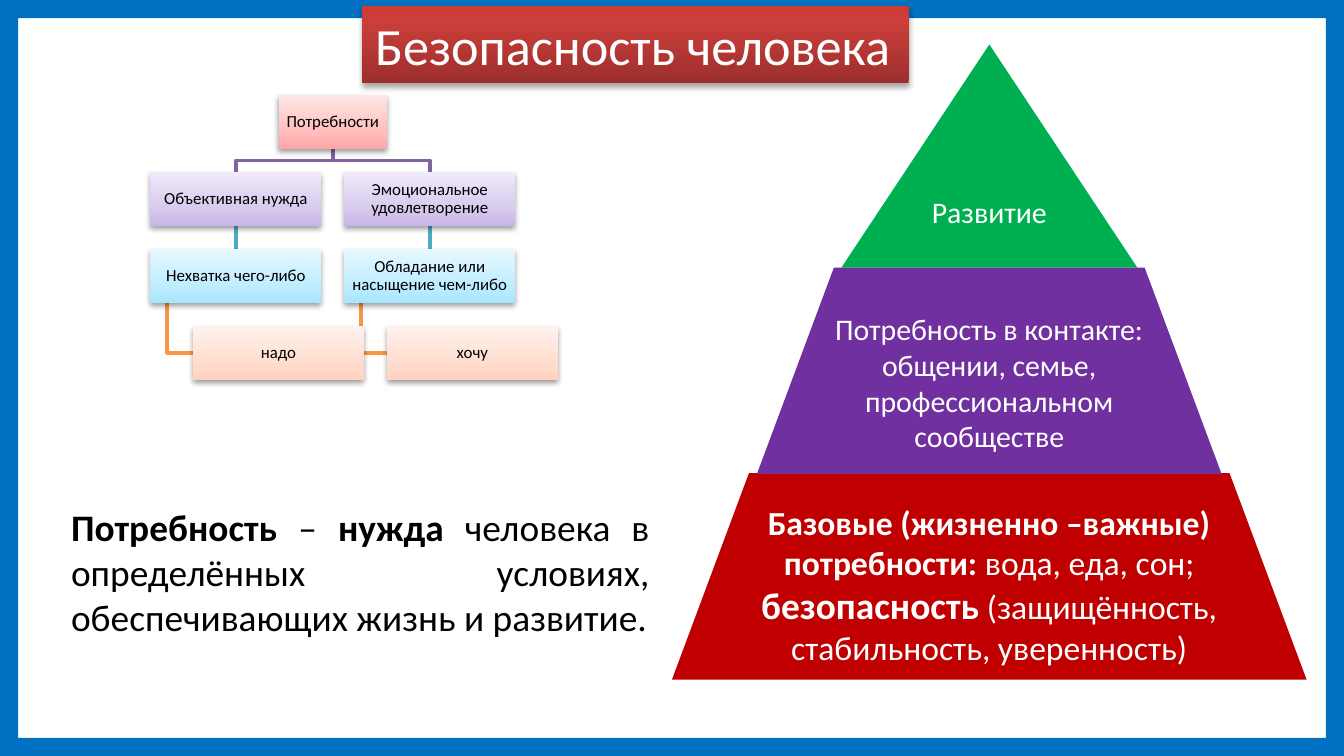
from pptx import Presentation
from pptx.dml.color import RGBColor
from pptx.enum.shapes import MSO_CONNECTOR, MSO_SHAPE
from pptx.enum.text import MSO_ANCHOR, MSO_AUTO_SIZE, PP_ALIGN
from pptx.oxml import parse_xml
from pptx.oxml.ns import nsdecls
from pptx.util import Pt

# Content: a run is (text, bold, size)
TITLE = [("Безопасность человека", False, 28)]
ROOT = "Потребности"
BRANCHES = [
    ("Объективная нужда", "Нехватка чего-либо", "надо"),
    ("Эмоциональное удовлетворение", "Обладание или насыщение чем-либо", "хочу"),
]
DEFINITION = [
    ("Потребность", True, 20),
    (" – ", False, 20),
    ("нужда", True, 20),
    (" человека в определённых условиях, обеспечивающих жизнь и развитие.", False, 20),
]
TOP_NEED = [("Развитие", False, 16)]
MIDDLE_NEED = [("Потребность в контакте: общении, семье, профессиональном сообществе", False, 16)]
BASE_NEED = [
    ("Базовые (жизненно –важные) потребности: ", True, 18),
    ("вода, еда, сон; ", False, 18),
    ("безопасность", True, 20),
    (" (защищённость, стабильность, уверенность)", False, 18),
]

# Gradient stops run from the bottom of a box to its top
TITLE_GRADIENT = [(0, "9C2F2D"), (80, "CB3E3A"), (100, "CE3B37")]
LEVEL_GRADIENTS = [
    [(0, "FFA6A5"), (35, "FFC0BF"), (100, "FFE7E7")],
    [(0, "C9B5E8"), (35, "D8CBEE"), (100, "F0EAF9")],
    [(0, "A7E6FF"), (35, "C1EDFF"), (100, "E7F8FF")],
    [(0, "FFD2BD"), (35, "FFDED0"), (100, "FFF2ED")],
]
LINK_COLORS = ["8064A2", "4BACC6", "F79646"]

# Tree geometry
TREE_LEFT, TREE_TOP = 80.5, 51
BOX_WIDTH, BOX_HEIGHT, ROOT_WIDTH = 91.6, 28.9, 58
COLUMN_STEP, ROW_STEP = 103.9, 41.2

# Pyramid geometry
PYRAMID_CENTER = 530
TIER_SLOPE = 0.373

deck = Presentation()
deck.slide_width, deck.slide_height = Pt(720), Pt(405)
page = deck.slides.add_slide(deck.slide_layouts[6])


def color(value):
    return RGBColor.from_string(value)


def write(shape, runs, ink="FFFFFF", align=PP_ALIGN.CENTER, anchor=MSO_ANCHOR.MIDDLE,
          inset=None, spacing=None, wrap=True, fit=False):
    frame = shape.text_frame
    frame.word_wrap = wrap
    frame.vertical_anchor = anchor
    if fit:
        frame.auto_size = MSO_AUTO_SIZE.SHAPE_TO_FIT_TEXT
    if inset is not None:
        frame.margin_left = frame.margin_right = Pt(inset)
        frame.margin_top = frame.margin_bottom = Pt(inset)
    para = frame.paragraphs[0]
    para.alignment = align
    if spacing:
        para.line_spacing = spacing
    for text, bold, size in runs:
        span = para.add_run()
        span.text = text
        span.font.name = "Calibri"
        span.font.size = Pt(size)
        span.font.bold = bold
        span.font.color.rgb = color(ink)


def add_block(kind, left, top, width, height, fill=None, adjust=None):
    shape = page.shapes.add_shape(kind, Pt(left), Pt(top), Pt(width), Pt(height))
    shape.shadow.inherit = False
    shape.line.fill.background()
    if fill:
        shape.fill.solid()
        shape.fill.fore_color.rgb = color(fill)
    if adjust is not None:
        shape.adjustments[0] = adjust
    return shape


def add_glossy_box(left, top, width, height, stops, alpha, distance):
    box = add_block(MSO_SHAPE.RECTANGLE, left, top, width, height)
    properties = box.element.spPr
    stop_xml = "".join(
        f'<a:gs pos="{place * 1000}"><a:srgbClr val="{value}"/></a:gs>' for place, value in stops)
    properties.find("{*}ln").addprevious(parse_xml(
        f'<a:gradFill {nsdecls("a")} rotWithShape="1"><a:gsLst>{stop_xml}</a:gsLst>'
        '<a:lin ang="16200000" scaled="0"/></a:gradFill>'))
    properties.find("{*}effectLst").append(parse_xml(
        f'<a:outerShdw {nsdecls("a")} blurRad="{Pt(3.1)}" dist="{Pt(distance)}" dir="5400000" '
        f'rotWithShape="0"><a:srgbClr val="000000"><a:alpha val="{alpha * 1000}"/>'
        '</a:srgbClr></a:outerShdw>'))
    return box


def add_link(points, line_color):
    ends = [(Pt(x), Pt(y)) for x, y in points]
    if len(ends) == 2:
        link = page.shapes.add_connector(MSO_CONNECTOR.STRAIGHT, *ends[0], *ends[1])
        link.element.spPr.append(parse_xml(f'<a:effectLst {nsdecls("a")}/>'))
    else:
        builder = page.shapes.build_freeform(*ends[0], scale=1.0)
        builder.add_line_segments(ends[1:], close=False)
        link = builder.convert_to_shape()
        link.shadow.inherit = False
        link.fill.background()
    link.line.color.rgb = color(line_color)
    link.line.width = Pt(2)


def add_tree_box(text, level, left, width=BOX_WIDTH):
    box = add_glossy_box(left, row_tops[level], width, BOX_HEIGHT, LEVEL_GRADIENTS[level], 38, 1.6)
    write(box, [(text, False, 9)], ink="000000", inset=0.72, spacing=0.9)


# Border and title
add_block(MSO_SHAPE.FRAME, 0, 0, 720, 405, "0070C0", 0.024)
title = add_glossy_box(193.9, 3.3, 293, 41.2, TITLE_GRADIENT, 35, 1.8)
write(title, TITLE, align=PP_ALIGN.LEFT, anchor=MSO_ANCHOR.TOP, wrap=False, fit=True)

# Tree links, behind the boxes
row_tops = [TREE_TOP + ROW_STEP * level for level in range(4)]
row_ends = [top + BOX_HEIGHT for top in row_tops]
columns = [TREE_LEFT + COLUMN_STEP * index for index in range(len(BRANCHES))]
root_center = (columns[0] + columns[-1] + BOX_WIDTH) / 2
fork = (row_ends[0] + row_tops[1]) / 2
leaf_middle = row_tops[3] + BOX_HEIGHT / 2
for left in reversed(columns):
    center, spine = left + BOX_WIDTH / 2, left + BOX_WIDTH / 10
    add_link([(spine, row_ends[2]), (spine, leaf_middle), (left + BOX_WIDTH / 4, leaf_middle)],
             LINK_COLORS[2])
    add_link([(center, row_ends[1]), (center, row_tops[2])], LINK_COLORS[1])
    add_link([(root_center, row_ends[0]), (root_center, fork), (center, fork),
              (center, row_tops[1])], LINK_COLORS[0])

# Tree boxes; the last level is indented
add_tree_box(ROOT, 0, root_center - ROOT_WIDTH / 2, ROOT_WIDTH)
for left, branch in zip(columns, BRANCHES):
    for level, text in enumerate(branch, start=1):
        add_tree_box(text, level, left + (BOX_WIDTH / 4 if level == 3 else 0))

# Pyramid: kind, top, width, height, fill, slope, text
TIERS = [
    (MSO_SHAPE.ISOSCELES_TRIANGLE, 23.8, 158.6, 119.6, "00B050", None, TOP_NEED),
    (MSO_SHAPE.TRAPEZOID, 253.5, 340, 110.6, "C00000", TIER_SLOPE, BASE_NEED),
    (MSO_SHAPE.TRAPEZOID, 143.4, 249, 110.6, "7030A0", TIER_SLOPE, MIDDLE_NEED),
]
for kind, top, width, height, fill, slope, runs in TIERS:
    tier = add_block(kind, PYRAMID_CENTER - width / 2, top, width, height, fill, slope)
    write(tier, runs)

# Definition
definition = page.shapes.add_textbox(Pt(31), Pt(266.6), Pt(324), Pt(80))
write(definition, DEFINITION, ink="000000", align=PP_ALIGN.JUSTIFY, anchor=MSO_ANCHOR.TOP, fit=True)

deck.save("out.pptx")
